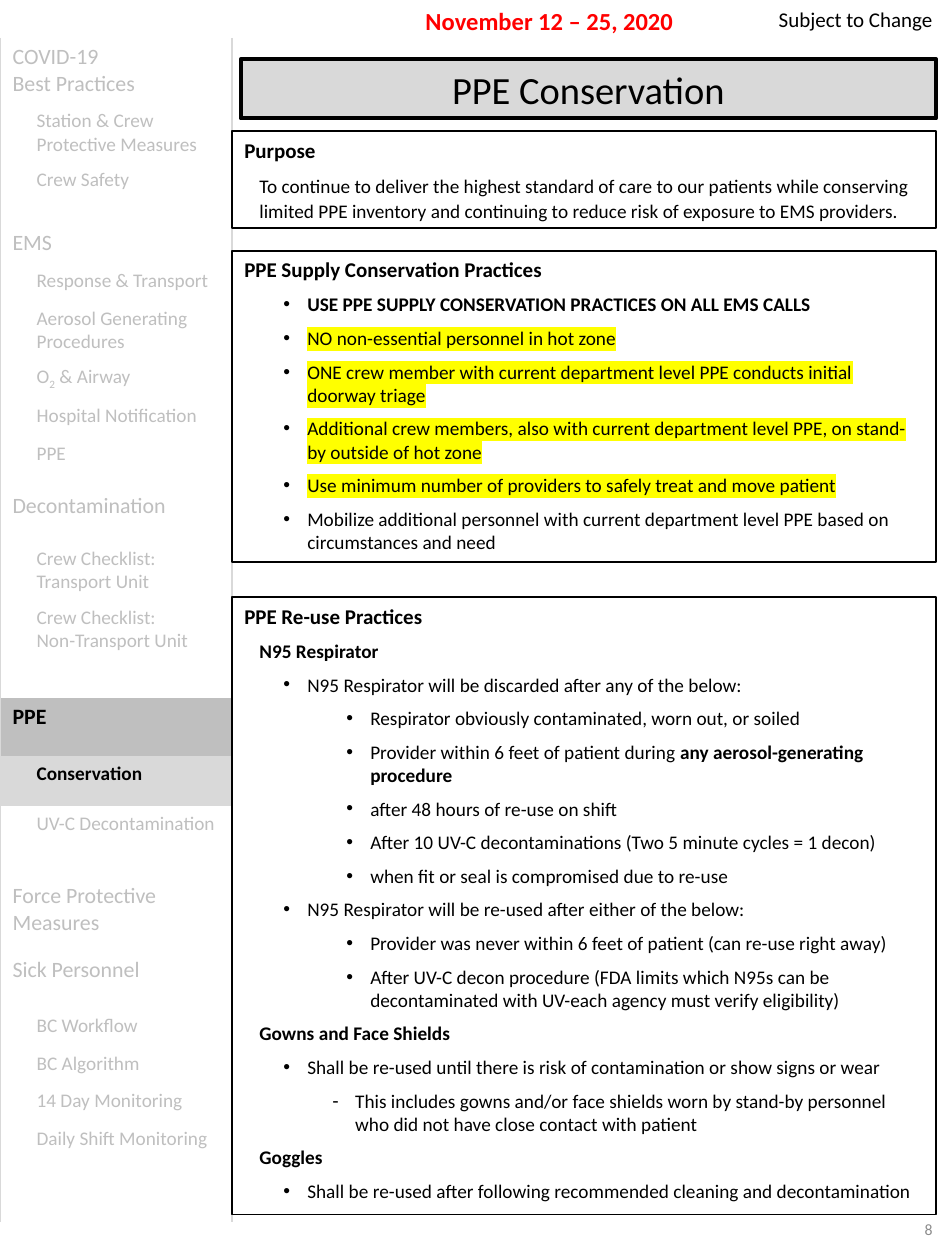
import lxml.etree
import pptx
import pptx.dml.color
import pptx.enum.shapes
import pptx.enum.text
import pptx.oxml.ns
import pptx.util

Inches = pptx.util.Inches
Pt = pptx.util.Pt
RGBColor = pptx.dml.color.RGBColor
Align = pptx.enum.text.PP_ALIGN
Anchor = pptx.enum.text.MSO_ANCHOR
AutoSize = pptx.enum.text.MSO_AUTO_SIZE
qn = pptx.oxml.ns.qn

BLACK = RGBColor(0x00, 0x00, 0x00)
WHITE = RGBColor(0xFF, 0xFF, 0xFF)
RED = RGBColor(0xFF, 0x00, 0x00)
YELLOW = RGBColor(0xFF, 0xFF, 0x00)
PAGE_GRAY = RGBColor(0x8C, 0x8C, 0x8C)
MID_GRAY = RGBColor(0xBF, 0xBF, 0xBF)
LIGHT_GRAY = RGBColor(0xD9, 0xD9, 0xD9)

# Paragraph kinds: left indent, first-line indent, bullet, level
PLAIN = (0.12, 0, None, 0)
BULLET = (0.5, -0.19, "•", 0)
SUB_BULLET = (1, -0.19, "•", 1)
DASH = (0.88, -0.18, "-", 1)

# Menu rows: row height, is a section heading, lines
MENU = [
    (0.4, True, ["COVID-19", "Best Practices"]),
    (0.4, False, ["Station & Crew Protective Measures"]),
    (0.49, False, ["Crew Safety"]),
    (0.3, True, ["EMS"]),
    (0.3, False, ["Response & Transport"]),
    (0.3, False, ["Aerosol Generating Procedures"]),
    (0.3, False, ["O₂ & Airway"]),
    (0.3, False, ["Hospital Notification"]),
    (0.4, False, ["PPE"]),
    (0.43, True, ["Decontamination"]),
    (0.3, False, ["Crew Checklist: Transport Unit"]),
    (0.78, False, ["Crew Checklist:", "Non-Transport Unit"]),
    (0.46, True, ["PPE"]),
    (0.4, False, ["Conservation"]),
    (0.56, False, ["UV-C Decontamination"]),
    (0.59, True, ["Force Protective Measures"]),
    (0.45, True, ["Sick Personnel"]),
    (0.3, False, ["BC Workflow"]),
    (0.3, False, ["BC Algorithm"]),
    (0.3, False, ["14 Day Monitoring"]),
    (0.3, False, ["Daily Shift Monitoring"]),
    (0.5, False, []),
]
ACTIVE_ROWS = {12: MID_GRAY, 13: LIGHT_GRAY}

# Panel items: paragraph kind, text, bold, highlight
PURPOSE = [
    (PLAIN, "To continue to deliver the highest standard of care to our patients while conserving "
     "limited PPE inventory and continuing to reduce risk of exposure to EMS providers.", False, None),
]
SUPPLY = [
    (BULLET, "USE PPE SUPPLY CONSERVATION PRACTICES ON ALL EMS CALLS", True, None),
    (BULLET, "NO non-essential personnel in hot zone", False, YELLOW),
    (BULLET, "ONE crew member with current department level PPE conducts initial doorway triage",
     False, YELLOW),
    (BULLET, "Additional crew members, also with current department level PPE, "
     "on stand-by outside of hot zone", False, YELLOW),
    (BULLET, "Use minimum number of providers to safely treat and move patient", False, YELLOW),
    (BULLET, "Mobilize additional personnel with current department level PPE "
     "based on circumstances and need", False, None),
]
REUSE = [
    (PLAIN, "N95 Respirator", True, None),
    (BULLET, "N95 Respirator will be discarded after any of the below:", False, None),
    (SUB_BULLET, "Respirator obviously contaminated, worn out, or soiled", False, None),
    (SUB_BULLET, "Provider within 6 feet of patient during |any aerosol-generating procedure",
     False, None),
    (SUB_BULLET, "after 48 hours of re-use on shift", False, None),
    (SUB_BULLET, "After 10 UV-C decontaminations (Two 5 minute cycles = 1 decon)", False, None),
    (SUB_BULLET, "when fit or seal is compromised due to re-use", False, None),
    (BULLET, "N95 Respirator will be re-used after either of the below:", False, None),
    (SUB_BULLET, "Provider was never within 6 feet of patient (can re-use right away)", False, None),
    (SUB_BULLET, "After UV-C decon procedure (FDA limits which N95s can be decontaminated "
     "with UV-each agency must verify eligibility)", False, None),
    (PLAIN, "Gowns and Face Shields", True, None),
    (BULLET, "Shall be re-used until there is risk of contamination or show signs or wear", False, None),
    (DASH, "This includes gowns and/or face shields worn by stand-by personnel "
     "who did not have close contact with patient", False, None),
    (PLAIN, "Goggles", True, None),
    (BULLET, "Shall be re-used after following recommended cleaning and decontamination", False, None),
]


class GuidePage:
    font = "Calibri"
    heading_size = 12
    body_size = 11

    def __init__(self, slide):
        self.slide = slide

    def run(self, paragraph, text, size, color=BLACK, bold=False, highlight=None):
        run = paragraph.add_run()
        run.text = text
        run.font.size = Pt(size)
        run.font.name = self.font
        run.font.bold = bold
        run.font.color.rgb = color
        if highlight is not None:
            properties = run.font._element
            mark = lxml.etree.Element(qn("a:highlight"))
            lxml.etree.SubElement(mark, qn("a:srgbClr"), val=str(highlight))
            properties.find(qn("a:latin")).addprevious(mark)
        return run

    def indent(self, paragraph, left, first=0, bullet=None, level=0):
        paragraph.level = level
        properties = paragraph._p.get_or_add_pPr()
        properties.set("marL", str(Inches(left)))
        properties.set("indent", str(Inches(first)))
        if bullet:
            lxml.etree.SubElement(properties, qn("a:buFont"), typeface="Arial")
            lxml.etree.SubElement(properties, qn("a:buChar"), char=bullet)

    def label(self, box, text, size, color, align, bold=False, anchor=Anchor.TOP):
        frame = self.slide.shapes.add_textbox(*map(Inches, box)).text_frame
        frame.word_wrap = True
        frame.vertical_anchor = anchor
        paragraph = frame.paragraphs[0]
        paragraph.alignment = align
        self.run(paragraph, text, size, color, bold)

    def title(self, box, text):
        title = self.slide.shapes.title
        title.left, title.top, title.width, title.height = map(Inches, box)
        title.fill.solid()
        title.fill.fore_color.rgb = LIGHT_GRAY
        title.line.color.rgb = BLACK
        title.line.width = Pt(2.25)
        title.text_frame.auto_size = AutoSize.NONE
        title.text_frame.vertical_anchor = Anchor.MIDDLE
        paragraph = title.text_frame.paragraphs[0]
        paragraph.alignment = Align.CENTER
        self.run(paragraph, text, 22)

    def panel(self, top, height, heading, items, line_spacing=None):
        """Outlined box with a bold heading above its items; "|" in an item starts bold text."""
        shape = self.slide.shapes.add_shape(
            pptx.enum.shapes.MSO_SHAPE.RECTANGLE,
            Inches(1.84), Inches(top), Inches(5.59), Inches(height))
        shape.shadow.inherit = False
        shape.fill.background()
        shape.line.color.rgb = BLACK
        shape.line.width = Pt(1)
        frame = shape.text_frame
        frame.word_wrap = True
        frame.auto_size = AutoSize.SHAPE_TO_FIT_TEXT
        frame.vertical_anchor = Anchor.TOP
        frame.paragraphs[0].alignment = Align.LEFT
        self.run(frame.paragraphs[0], heading, self.heading_size, bold=True)
        for kind, text, bold, highlight in items:
            paragraph = frame.add_paragraph()
            paragraph.alignment = Align.LEFT
            paragraph.space_before = Pt(6)
            if line_spacing:
                paragraph.line_spacing = Pt(line_spacing)
            self.indent(paragraph, *kind)
            for index, part in enumerate(text.split("|")):
                self.run(paragraph, part, self.body_size, bold=bold or index > 0, highlight=highlight)

    def side_borders(self, cell):
        properties = cell._tc.get_or_add_tcPr()
        for side in ("lnL", "lnR", "lnT", "lnB"):
            line = lxml.etree.SubElement(properties, qn(f"a:{side}"), w=str(Pt(1)))
            if side in ("lnL", "lnR"):
                fill = lxml.etree.SubElement(line, qn("a:solidFill"))
                lxml.etree.SubElement(fill, qn("a:srgbClr"), val=str(LIGHT_GRAY))
            else:
                lxml.etree.SubElement(line, qn("a:noFill"))

    def menu(self, box, rows, active):
        table = self.slide.shapes.add_table(len(rows), 1, *map(Inches, box)).table
        table.first_row = table.horz_banding = False
        for index, (height, is_heading, lines) in enumerate(rows):
            table.rows[index].height = Inches(height)
            cell = table.cell(index, 0)
            self.side_borders(cell)
            cell.fill.solid()
            cell.fill.fore_color.rgb = active.get(index, WHITE)
            is_active = index in active
            color = BLACK if is_active else MID_GRAY
            size = 12.5 if is_heading else self.body_size
            for number, text in enumerate(lines):
                frame = cell.text_frame
                paragraph = frame.add_paragraph() if number else frame.paragraphs[0]
                if not is_heading:
                    self.indent(paragraph, 0.19)
                before, subscript, after = text.partition("₂")
                self.run(paragraph, before, size, color, is_active)
                if subscript:
                    lowered = self.run(paragraph, "2", size, color)
                    lowered.font._element.set("baseline", "-25000")
                    self.run(paragraph, after, size, color)


def main():
    presentation = pptx.Presentation()
    presentation.slide_width = Inches(7.5)
    presentation.slide_height = Inches(10)
    page = GuidePage(presentation.slides.add_slide(presentation.slide_layouts[5]))
    page.label((5.81, 9.49, 1.69, 0.53), "8", 9, PAGE_GRAY, Align.RIGHT, anchor=Anchor.MIDDLE)
    page.label((2.9, 0, 2.92, 0.57), "November 12 – 25, 2020", 14, RED, Align.CENTER, bold=True)
    page.label((5.81, 0, 1.69, 0.3), "Subject to Change", 12, BLACK, Align.RIGHT)
    page.menu((0, 0.3, 1.84, 9.38), MENU, ACTIVE_ROWS)
    page.title((1.91, 0.47, 5.52, 0.47), "PPE Conservation")
    page.panel(1.04, 0.77, "Purpose", PURPOSE, line_spacing=14.2)
    page.panel(1.99, 2.47, "PPE Supply Conservation Practices", SUPPLY)
    page.panel(4.74, 4.9, "PPE Re-use Practices", REUSE)
    presentation.save("out.pptx")


if __name__ == "__main__":
    main()
